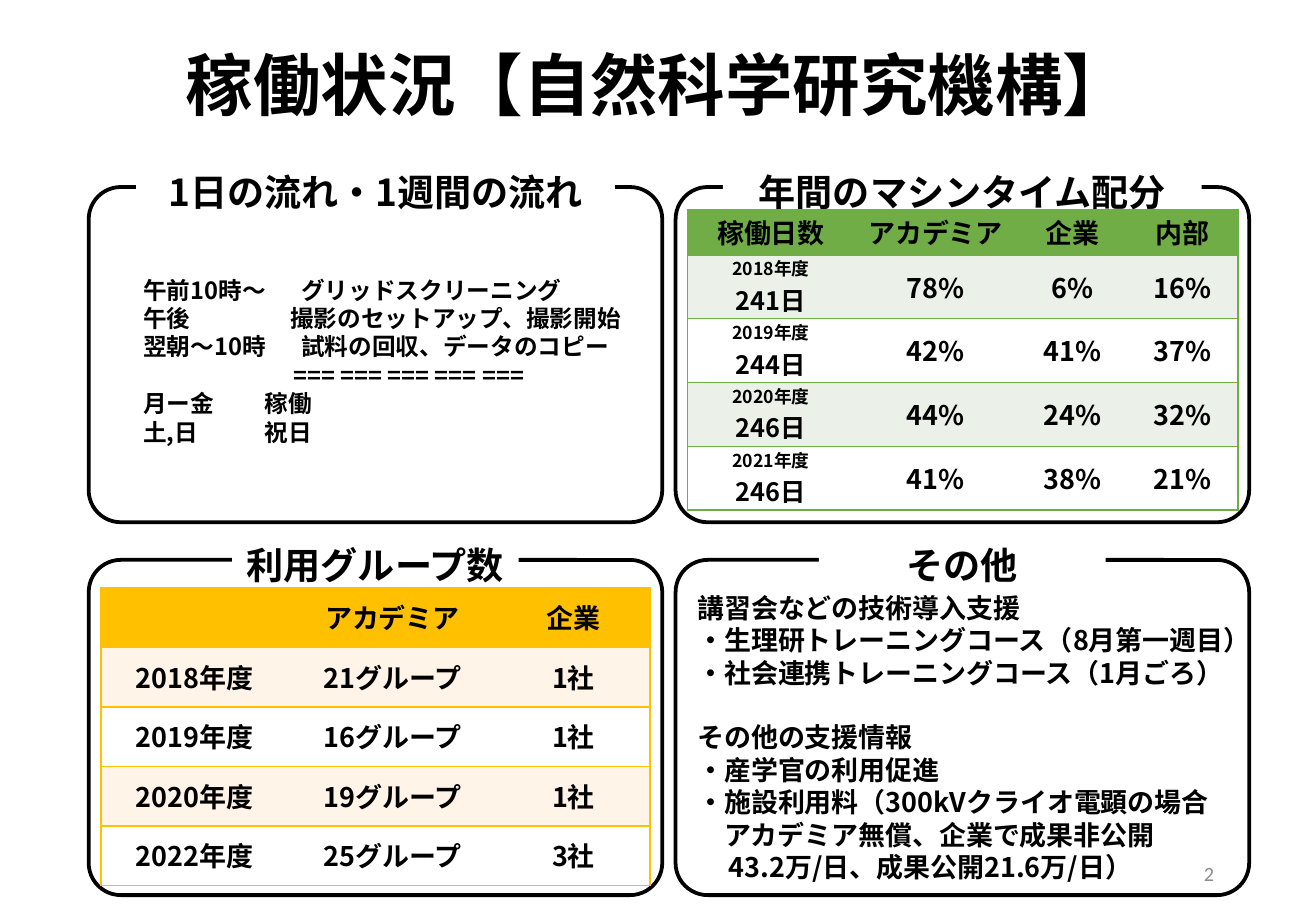
from lxml import etree
from pptx import Presentation
from pptx.dml.color import RGBColor
from pptx.enum.shapes import MSO_SHAPE
from pptx.enum.text import MSO_ANCHOR, PP_ALIGN
from pptx.oxml.ns import qn
from pptx.util import Emu, Inches, Pt

LEFT, MID, RIGHT = PP_ALIGN.LEFT, PP_ALIGN.CENTER, PP_ALIGN.RIGHT
CENTER = MSO_ANCHOR.MIDDLE
ROUND, RECT = MSO_SHAPE.ROUNDED_RECTANGLE, MSO_SHAPE.RECTANGLE
SANS = "Noto Sans CJK JP"
PLAIN = "{2D5ABB26-0587-4C30-8999-92F81FD0307C}"
COLS, ROWS = (0.73, 5.56), (1.54, 4.61)
WIDE, HIGH = 4.72, 2.76


def rgb(code):
    return RGBColor.from_string(code)


def write(par, text, size, align=LEFT, lead=1.2, color="000000", face=SANS, bold=True):
    par.text = text
    par.alignment = align
    par.line_spacing = Pt(size * lead) if lead > 1 else lead
    font = par.font
    font.size, font.bold, font.name = Pt(size), bold, face
    font.color.rgb = rgb(color)
    base = par._p.pPr.find(qn("a:defRPr"))
    etree.SubElement(base, qn("a:ea"), typeface=face)
    return base


deck = Presentation()
deck.slide_width, deck.slide_height = Inches(10.83), Inches(7.5)
slide = deck.slides.add_slide(deck.slide_layouts[5])
shapes = slide.shapes

# Title
title = shapes.title
title.left, title.top = Emu(0), Inches(0.16)
title.width, title.height = deck.slide_width, Inches(1.14)
title.text_frame.vertical_anchor = CENTER
write(title.text_frame.paragraphs[0], "稼働状況【自然科学研究機構】", 40, MID, 0.9)

# Four framed panels, each with a heading that breaks the top line
heads = [
    ("1日の流れ・1週間の流れ", 0, 0, 3.94),
    ("年間のマシンタイム配分", 1, 0, 3.94),
    ("利用グループ数", 0, 1, 2.36),
    ("その他", 1, 1, 2.36),
]
for text, col, row, span in heads:
    x, y = COLS[col], ROWS[row]
    panel = shapes.add_shape(ROUND, Inches(x), Inches(y), Inches(WIDE), Inches(HIGH))
    panel.adjustments[0] = 0.096
    panel.fill.background()
    panel.line.color.rgb = rgb("000000")
    panel.line.width = Pt(2.25)
    head = shapes.add_shape(RECT, Inches(x + (WIDE - span) / 2), Inches(y - 0.2),
                            Inches(span), Inches(0.47))
    head.fill.solid()
    head.fill.fore_color.rgb = rgb("FFFFFF")
    head.line.fill.background()
    panel.shadow.inherit = head.shadow.inherit = False
    head.text_frame.vertical_anchor = CENTER
    write(head.text_frame.paragraphs[0], text, 22, MID)

# Tables: place, column widths, row heights, line colour, band colour, cells
tables = [
    (5.66, 1.73, (1.37, 1.34, 0.91, 0.91), (0.37, 0.525), "70AD47", "EBF1E9", [
        ("稼働日数", "アカデミア", "企業", "内部"),
        ("2018年度\n241日", "78%", "6%", "16%"),
        ("2019年度\n244日", "42%", "41%", "37%"),
        ("2020年度\n246日", "44%", "24%", "32%"),
        ("2021年度\n246日", "41%", "38%", "21%"),
    ]),
    (0.83, 4.84, (1.54, 1.72, 1.26), (0.49, 0.49), "FFC000", "FFF4E7", [
        ("", "アカデミア", "企業"),
        ("2018年度", "21グループ", "1社"),
        ("2019年度", "16グループ", "1社"),
        ("2020年度", "19グループ", "1社"),
        ("2022年度", "25グループ", "3社"),
    ]),
]
for x, y, widths, tall, line, band, data in tables:
    last = len(widths) - 1
    table = shapes.add_table(len(data), len(widths), Inches(x), Inches(y), Inches(sum(widths)),
                             Inches(tall[0] + 4 * tall[1])).table
    table._tbl.tblPr.find(qn("a:tableStyleId")).text = PLAIN
    for col, width in enumerate(widths):
        table.columns[col].width = Inches(width)
    for row, texts in enumerate(data):
        table.rows[row].height = Inches(tall[min(row, 1)])
        for col, text in enumerate(texts):
            cell = table.cell(row, col)
            cell.vertical_anchor = CENTER
            cell.margin_top = cell.margin_bottom = 0
            sides = ["lnL"] * (col == 0) + ["lnR"] * (col == last) + ["lnT", "lnB"]
            for side in sides:
                edge = etree.SubElement(cell._tc.tcPr, qn("a:" + side), w="12700")
                fill = etree.SubElement(edge, qn("a:solidFill"))
                etree.SubElement(fill, qn("a:srgbClr"), val=line)
            cell.fill.solid()
            cell.fill.fore_color.rgb = rgb(line if row == 0 else band if row % 2 else "FFFFFF")
            parts = text.split("\n")
            sizes = (10.5, 15) if len(parts) > 1 else (16,)
            for i, part in enumerate(parts):
                par = cell.text_frame.add_paragraph() if i else cell.text_frame.paragraphs[0]
                write(par, part, sizes[i], MID, 1.45 if i else 1.4)

# Daily and weekly flow: text, tab stop
flow = [
    ("午前10時〜\tグリッドスクリーニング", 1.3),
    ("午後\t撮影のセットアップ、撮影開始", 1.21),
    ("翌朝〜10時\t試料の回収、データのコピー", 1.3),
    ("=== === === === ===", 0),
    ("月ー金\t稼働", 1),
    ("土,日\t祝日", 1),
]
frame = shapes.add_textbox(Inches(1.08), Inches(2.22), Inches(4.57), Inches(1.51)).text_frame
frame.word_wrap = True
for i, (text, stop) in enumerate(flow):
    par = frame.add_paragraph() if i else frame.paragraphs[0]
    base = write(par, text, 14, LEFT if stop else MID)
    if stop:
        tabs = etree.Element(qn("a:tabLst"))
        etree.SubElement(tabs, qn("a:tab"), pos=str(Inches(stop)), algn="l")
        base.addprevious(tabs)

# Other support: text, indent, space before in points
notes = [
    ("講習会などの技術導入支援", 0, 0),
    ("・生理研トレーニングコース（8月第一週目）", 0, 0),
    ("・社会連携トレーニングコース（1月ごろ）", 0, 0),
    ("その他の支援情報", 0, 19.2),
    ("・産学官の利用促進", 0, 0),
    ("・施設利用料（300kVクライオ電顕の場合", 0, 0),
    ("アカデミア無償、企業で成果非公開", 0.22, 0),
    ("43.2万/日、成果公開21.6万/日）", 0.26, 0),
]
frame = shapes.add_textbox(Inches(5.64), Inches(4.82), Inches(4.92), Inches(2.52)).text_frame
frame.word_wrap = True
for i, (text, indent, gap) in enumerate(notes):
    par = frame.add_paragraph() if i else frame.paragraphs[0]
    write(par, text, 16)
    par.space_before = Pt(gap)
    par._p.pPr.set("marL", str(Inches(indent)))

# Page number
frame = shapes.add_textbox(Inches(7.65), Inches(6.99), Inches(2.44), Inches(0.4)).text_frame
frame.word_wrap = True
frame.vertical_anchor = CENTER
write(frame.paragraphs[0], "2", 12, RIGHT, color="8C8C8C", face="Calibri", bold=False)

deck.save("out.pptx")
